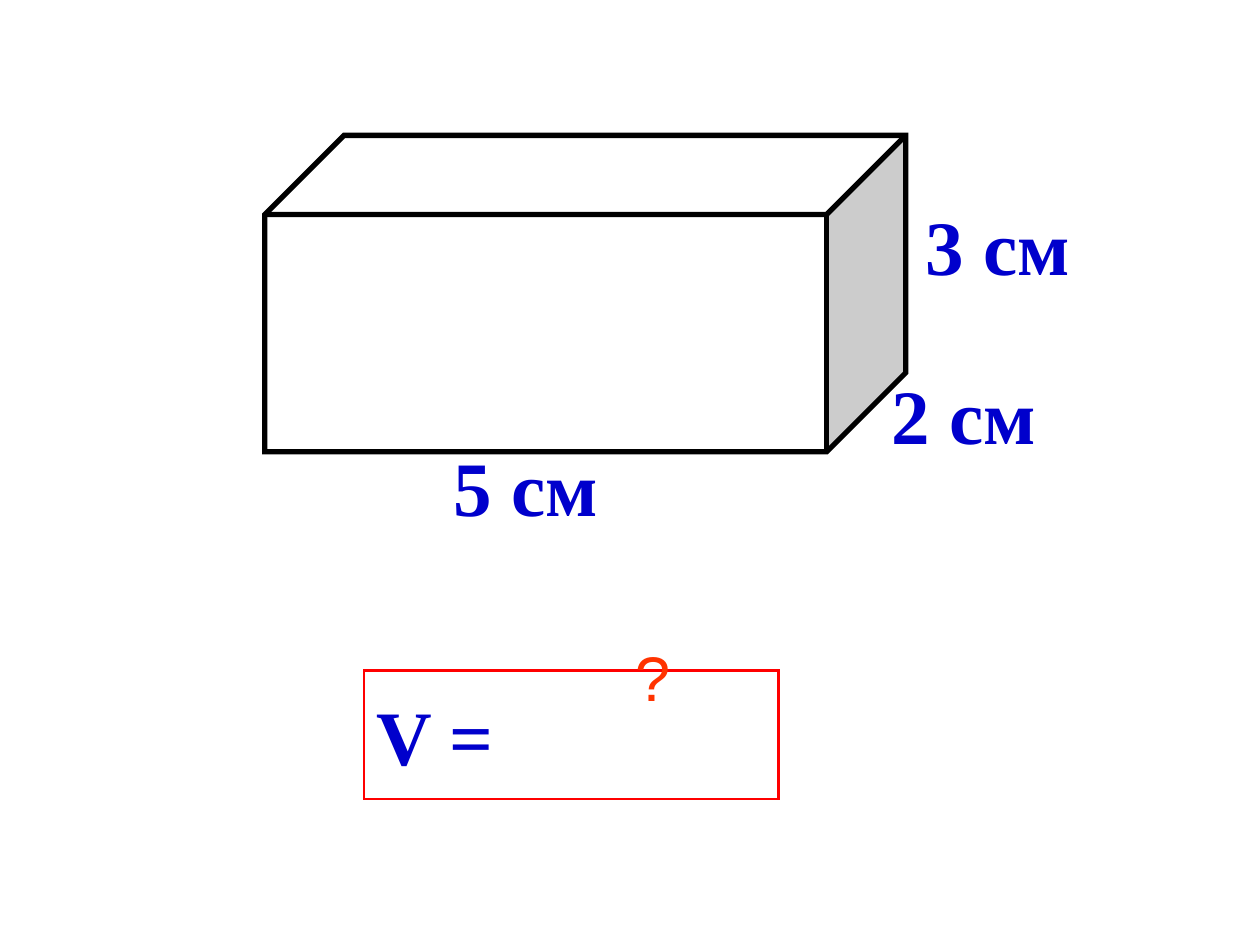
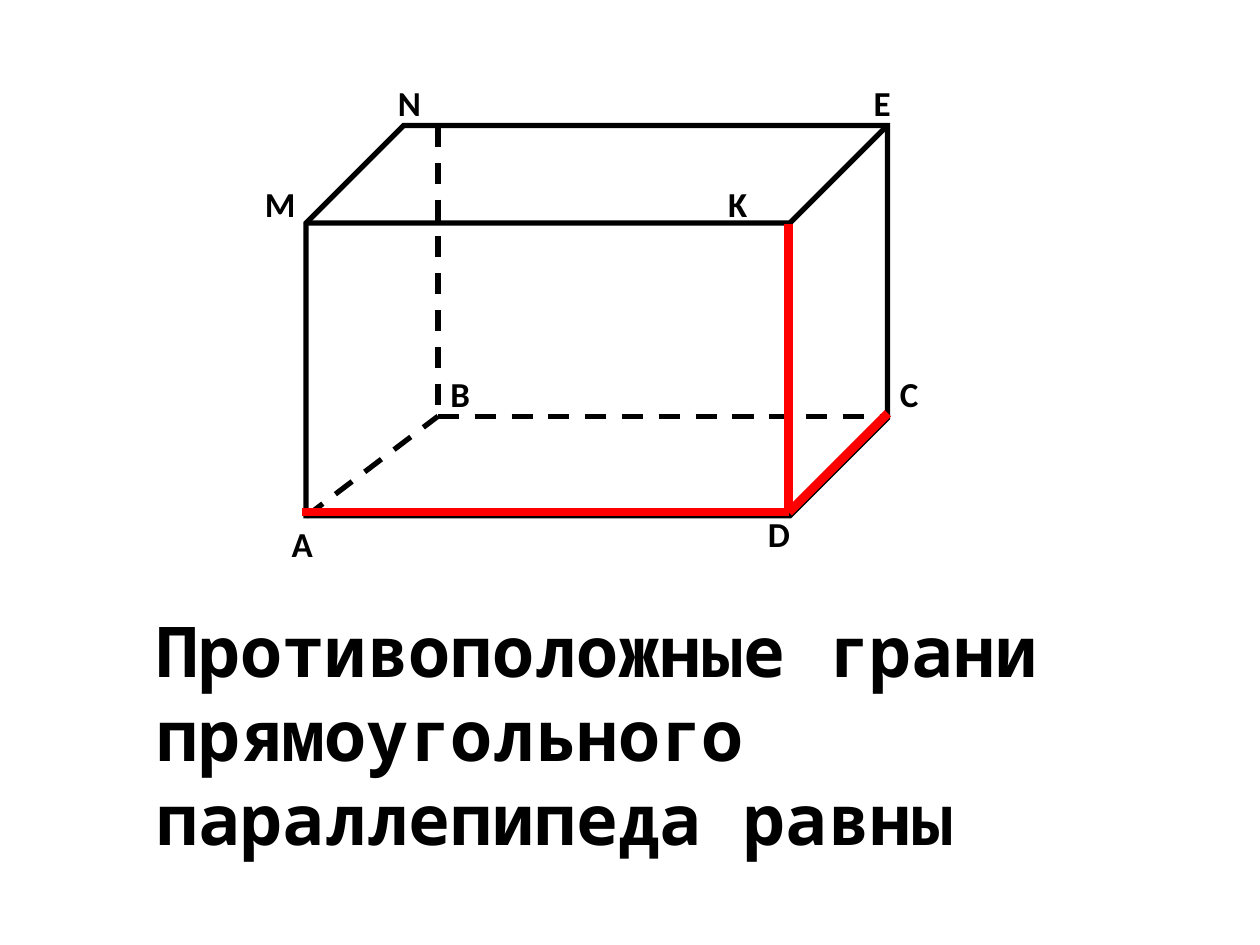
from lxml.etree import SubElement
from pptx import Presentation
from pptx.dml.color import RGBColor
from pptx.enum.dml import MSO_LINE
from pptx.enum.shapes import MSO_CONNECTOR, MSO_SHAPE
from pptx.enum.text import MSO_ANCHOR, PP_ALIGN
from pptx.oxml.ns import qn
from pptx.util import Cm, Pt

BLACK = RGBColor(0x00, 0x00, 0x00)
WHITE = RGBColor(0xFF, 0xFF, 0xFF)
BLUE = RGBColor(0x00, 0x00, 0xCC)
RED = RGBColor(0xFF, 0x00, 0x00)
ORANGE = RGBColor(0xFF, 0x33, 0x00)

MEASURE = dict(font="Times New Roman", size=44, color=BLUE, bold=True)
VERTEX = dict(font="Calibri", size=20, bold=True)

BRICK = (5.34, 2.73, 12.92, 6.38)
DIMENSIONS = [("5 см", 8.02, 8.74), ("3 см", 17.53, 3.87), ("2 см", 16.85, 7.29)]
DIMENSION_SIZE = (5.16, 2.59)
VOLUME = ("V =", (7.34, 13.52, 8.36, 2.59))
QUESTION = ("?", (12.01, 12.75, 2.29, 4.09))

BOX = (6.17, 2.53, 11.72, 7.87)
VERTICES = [
    ("М", 5.09, 3.56), ("N", 7.77, 1.52), ("E", 17.36, 1.52), ("K", 14.43, 3.56),
    ("C", 17.89, 7.39), ("D", 15.23, 10.21), ("A", 5.63, 10.41), ("B", 8.83, 7.39),
]
VERTEX_SIZE = (1.6, 1.09)
HIDDEN_CORNER = (8.83, 8.39)
HIDDEN_ENDS = [(6.17, 10.41), (8.83, 2.54), (17.9, 8.39)]
MEASURED_EDGES = [
    ((15.9, 4.52), (15.9, 10.32)),
    ((17.9, 8.33), (15.9, 10.33)),
    ((6.09, 10.32), (15.9, 10.32)),
]
STATEMENT = ("Противоположные грани прямоугольного параллепипеда равны",
             (2.9, 12.13, 20.6, 3.63))


def lengths(values):
    return [Cm(value) for value in values]


def write(frame, text, font, size, color=BLACK, bold=False,
          align=PP_ALIGN.LEFT, anchor=MSO_ANCHOR.TOP, wrap=True, leading=None):
    frame.word_wrap = wrap
    frame.vertical_anchor = anchor
    paragraph = frame.paragraphs[0]
    paragraph.alignment = align
    if leading:
        paragraph.line_spacing = Pt(leading)
    run = paragraph.add_run()
    run.text = text
    run.font.name = font
    run.font.size = Pt(size)
    run.font.bold = bold
    run.font.color.rgb = color


def add_label(slide, text, place, **style):
    write(slide.shapes.add_textbox(*lengths(place)).text_frame, text, **style)


def add_solid(slide, kind, place, color, width, fill=None):
    solid = slide.shapes.add_shape(kind, *lengths(place))
    solid.shadow.inherit = False
    if fill is None:
        solid.fill.background()
    else:
        solid.fill.solid()
        solid.fill.fore_color.rgb = fill
    solid.line.color.rgb = color
    solid.line.width = Pt(width)
    SubElement(solid._element.spPr.find(qn("a:ln")), qn("a:miter"), lim="800000")
    return solid


def add_edge(slide, start, end, color, width, dash=None):
    edge = slide.shapes.add_connector(MSO_CONNECTOR.STRAIGHT, *lengths(start + end))
    edge.line.color.rgb = color
    edge.line.width = Pt(width)
    if dash:
        edge.line.dash_style = dash
    SubElement(edge._element.spPr, qn("a:effectLst"))


def build_volume(slide):
    add_solid(slide, MSO_SHAPE.CUBE, BRICK, BLACK, 3, fill=WHITE)
    for text, left, top in DIMENSIONS:
        add_label(slide, text, (left, top) + DIMENSION_SIZE,
                  align=PP_ALIGN.CENTER, **MEASURE)
    text, place = VOLUME
    formula = add_solid(slide, MSO_SHAPE.RECTANGLE, place, RED, 1.5, fill=WHITE)
    write(formula.text_frame, text, anchor=MSO_ANCHOR.MIDDLE, **MEASURE)
    add_label(slide, *QUESTION, font="Arial", size=36, color=ORANGE,
              align=PP_ALIGN.CENTER, wrap=False)


def build_faces(slide):
    add_solid(slide, MSO_SHAPE.CUBE, BOX, BLACK, 3)
    for end in HIDDEN_ENDS:
        start, finish = sorted([HIDDEN_CORNER, end])
        add_edge(slide, start, finish, BLACK, 3, dash=MSO_LINE.DASH)
    for text, left, top in VERTICES:
        add_label(slide, text, (left, top) + VERTEX_SIZE, **VERTEX)
    add_label(slide, *STATEMENT, font="Noto Sans Mono", size=40, bold=True, leading=48)
    for start, end in MEASURED_EDGES:
        add_edge(slide, start, end, RED, 5)


def main():
    deck = Presentation()
    deck.slide_width, deck.slide_height = Cm(25.4), Cm(19.05)
    blank = deck.slide_layouts.get_by_name("Blank")
    for build in (build_volume, build_faces):
        build(deck.slides.add_slide(blank))
    deck.save("out.pptx")


if __name__ == "__main__":
    main()
